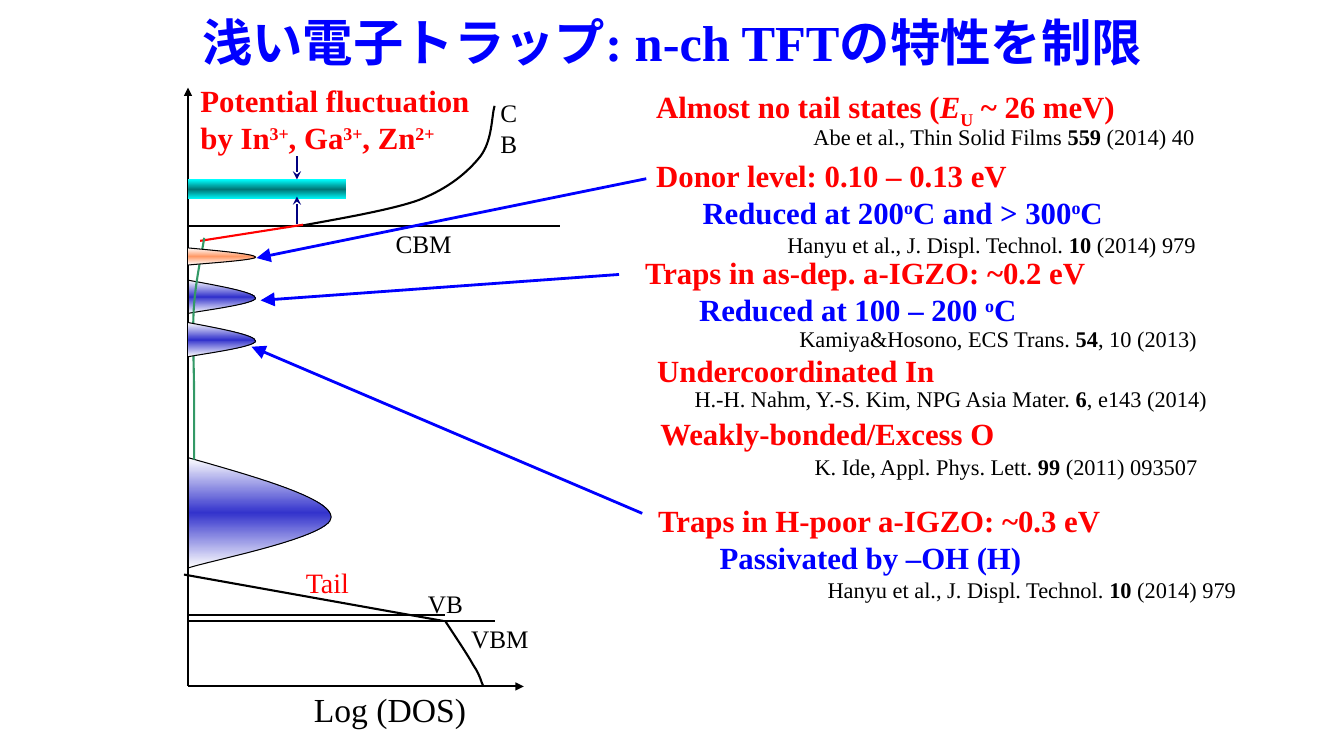
from collections import namedtuple
from copy import deepcopy

from lxml import etree
from pptx import Presentation
from pptx.dml.color import RGBColor
from pptx.enum.shapes import MSO_CONNECTOR, MSO_SHAPE
from pptx.enum.text import MSO_ANCHOR, MSO_AUTO_SIZE, PP_ALIGN
from pptx.oxml.ns import qn
from pptx.util import Inches, Pt

STRAIGHT = MSO_CONNECTOR.STRAIGHT
RECTANGLE = MSO_SHAPE.RECTANGLE
MIDDLE = MSO_ANCHOR.MIDDLE
CENTER = PP_ALIGN.CENTER
GROW = MSO_AUTO_SIZE.SHAPE_TO_FIT_TEXT

BLACK = RGBColor(0x00, 0x00, 0x00)
WHITE = RGBColor(0xFF, 0xFF, 0xFF)
RED = RGBColor(0xFF, 0x00, 0x00)
BLUE = RGBColor(0x00, 0x00, 0xFF)
NAVY = RGBColor(0x00, 0x00, 0x80)
GREEN = RGBColor(0x33, 0x99, 0x66)
INDIGO = RGBColor(0x33, 0x33, 0xCC)
ORANGE = RGBColor(0xFF, 0x99, 0x66)
CYAN = RGBColor(0x00, 0xFF, 0xFF)
TEAL = RGBColor(0x00, 0x76, 0x76)

FONT = "Times New Roman"
CELL = Inches(0.1)  # the slide is a grid of square cells
BASELINES = {"sup": "30000", "sub": "-25000"}

# Boxes and points are counted in grid cells.
Box = namedtuple("Box", "left top width height")
TITLE = Box(16.67, 0, 100, 8.3)
DIAGRAM = Box(18.65, 8.7, 33.3, 59.4)
NOTES = Box(63, 8.23, 61.2, 52.1)


def cells(n):
    return round(n * CELL)


def inside(box, x, y):
    """Slide position of a point given from the box's top left corner."""
    return box.left + x, box.top + y


def add_text(slide, box, lines, size, indent=0):
    """One paragraph; each line is (colour, runs), each run (text, styles)."""
    tf = slide.shapes.add_textbox(*map(cells, box)).text_frame
    tf.word_wrap = False
    tf.auto_size = GROW
    p = tf.paragraphs[0]
    if indent:
        pPr = p._p.get_or_add_pPr()
        pPr.set("marL", str(cells(indent)))
        pPr.set("indent", str(-cells(indent)))
    for i, (color, runs) in enumerate(lines):
        if i:
            p.add_line_break()
        for text, styles in runs:
            r = p.add_run()
            r.text = text
            r.font.name, r.font.size = FONT, Pt(size)
            r.font.color.rgb = color
            r.font.bold = "b" in styles
            r.font.italic = "i" in styles
            for style in BASELINES.keys() & set(styles):
                r._r.get_or_add_rPr().set("baseline", BASELINES[style])
    return tf


def bold(text, *styles):
    return text, ("b", *styles)


def add_line(slide, start, end, color=BLACK, width=1.5, **tips):
    """A straight line; tips name its headEnd or tailEnd as (type, size)."""
    line = slide.shapes.add_connector(STRAIGHT, *map(cells, (*start, *end)))
    line.line.color.rgb = color
    line.line.width = Pt(width)
    for side, (kind, size) in tips.items():
        etree.SubElement(line.line._get_or_add_ln(), qn("a:" + side),
                         type=kind, w=size, len=size)
    etree.SubElement(line._element.spPr, qn("a:effectLst"))


def add_curve(slide, points, color=BLACK, width=1.5):
    """An open outline of chained cubic curves; two points make a straight one."""
    start, *rest = [(cells(x), cells(y)) for x, y in points]
    fb = slide.shapes.build_freeform(*start)
    fb.add_line_segments(rest, close=False)
    sp = fb.convert_to_shape()
    segments = list(sp._element.iter(qn("a:lnTo")))
    for i in range(0, len(segments) - 2, 3):
        curve = etree.Element(qn("a:cubicBezTo"))
        segments[i].addprevious(curve)
        for segment in segments[i:i + 3]:
            curve.append(segment[0])
            segment.getparent().remove(segment)
    sp.shadow.inherit = False
    sp.fill.background()
    sp.line.color.rgb = color
    sp.line.width = Pt(width)
    return sp


def fill_gradient(sp, edge, core):
    """Vertical gradient: edge, core in the middle, edge."""
    sp.fill.gradient()
    sp.fill.gradient_angle = 270
    first = sp.fill.gradient_stops[0]._gs
    first.addnext(deepcopy(first))
    for stop, position, color in zip(sp.fill.gradient_stops, (0, 0.5, 1), (edge, core, edge)):
        stop.position = position
        stop.color.rgb = color


def add_peak(slide, box, color):
    """A trap level bulging from the energy axis."""
    shares = [(0, 0), (0.49, 0.18), (1, 0.37), (1, 0.54),
              (1, 0.72), (0.16, 0.93), (0, 1)]
    points = [inside(box, x * box.width, y * box.height) for x, y in shares]
    fill_gradient(add_curve(slide, points, width=0.75), WHITE, color)


def draw_title(slide, box):
    title = [(BLUE, [bold("浅い電子トラップ: n-ch TFTの特性を制限")])]
    tf = add_text(slide, box, title, 36)
    tf.auto_size = MSO_AUTO_SIZE.NONE
    tf.word_wrap = True
    tf.vertical_anchor = MIDDLE
    tf.paragraphs[0].alignment = CENTER


def draw_diagram(slide, box):
    def at(x, y):
        return inside(box, x, y)

    def peak(y, width, height, color=INDIGO):
        add_peak(slide, Box(*at(0, y), width, height), color)

    peak(36.7, 14.2, 10.95)
    peak(19.1, 6.7, 3.3)

    origin = at(0, box.height)
    arrow, barb = ("triangle", "med"), ("stealth", "med")
    add_line(slide, at(0, 13.7), at(36.9, 13.7))
    add_line(slide, origin, at(box.width, box.height), tailEnd=arrow)
    add_line(slide, at(0, 52.9), at(30.4, 52.9))
    add_line(slide, at(-0.4, 48.3), at(25.3, 52.9))

    conduction_band = [(11.2, 13.7), (13.2, 13.3), (20.1, 12.2), (23, 11.1),
                       (26, 9.9), (27.8, 8.3), (29, 6.8),
                       (30.2, 5.2), (30.1, 2.8), (30.4, 1.8)]
    valence_band = [(25.5, 52.9), (26.6, 54.6), (27.7, 56.2), (28.3, 57.3),
                    (29, 58.3), (29.1, 59.1), (29.3, 59.4)]
    fluctuation_tail = [(1.2, 15.2), (11.4, 13.6)]
    gap_states = [(0.6, 36.9), (0.6, 35.8), (0.6, 33), (0.6, 30.4),
                  (0.6, 27.8), (0.4, 24), (0.6, 21.5),
                  (0.8, 18.9), (1.4, 16.3), (1.6, 14.9)]
    for points, color in ((conduction_band, BLACK), (valence_band, BLACK),
                          (fluctuation_tail, RED), (gap_states, GREEN)):
        add_curve(slide, [at(*point) for point in points], color)

    add_line(slide, at(0, 0), origin, headEnd=arrow)
    peak(15.9, 6.7, 1.7, ORANGE)
    peak(23.3, 6.7, 3.4)

    band = slide.shapes.add_shape(RECTANGLE, *map(cells, (*at(0, 9.1), 15.7, 2)))
    band.shadow.inherit = False
    band.line.fill.background()
    fill_gradient(band, CYAN, TEAL)
    add_line(slide, at(10.8, 10.8), at(10.8, 13.5), NAVY, headEnd=barb)
    add_line(slide, at(10.8, 6.8), at(10.8, 9.1), NAVY, tailEnd=barb)
    add_line(slide, at(0, 52.3), at(25.5, 52.3))

    for x, y, width, text, size, color in ((11.5, 59.2, 17.1, "Log (DOS)", 24, BLACK),
                                           (30, 0.5, 5.3, "CB", 18, BLACK),
                                           (22.8, 49.2, 5.5, "VB", 18, BLACK),
                                           (19.6, 13.5, 7.6, "CBM", 18, BLACK),
                                           (27.1, 52.6, 7.7, "VBM", 18, BLACK),
                                           (10.7, 46.9, 6.3, "Tail", 20, RED)):
        add_text(slide, Box(*at(x, y), width, 1 + size / 6), [(color, [(text, ())])], size)

    ions = [bold("by In"), bold("3+", "sup"), bold(", Ga"), bold("3+", "sup"),
            bold(", Zn"), bold("2+", "sup")]
    fluctuation = [(RED, [bold("Potential fluctuation")]), (RED, ions)]
    add_text(slide, Box(*at(0.25, -1.1), 29.6, 8.4), fluctuation, 22)


def draw_notes(slide, box):
    """Findings, each with its remedy if any, and their references."""
    degree = bold("o", "sup")
    findings = [
        (1.1, 0, 48.2, [bold("Almost no tail states ("), bold("E", "i"),
                        bold("U", "sub"), bold(" ~ 26 meV)")], 0, []),
        (1.1, 6.8, 47.1, [bold("Donor level: 0.10 – 0.13 eV")], 4.6,
         [bold("Reduced at 200"), degree, bold("C and > 300"), degree, bold("C")]),
        (0, 16.5, 46.2, [bold("Traps in as-dep. a-IGZO: ~0.2 eV")], 5.35,
         [bold("Reduced at 100 – 200 "), degree, bold("C")]),
        (1.2, 26.2, 29.8, [bold("Undercoordinated In")], 0, []),
        (1.5, 32.4, 35.5, [bold("Weakly-bonded/Excess O")], 0, []),
        (1.3, 41.1, 46.4, [bold("Traps in H-poor a-IGZO: ~0.3 eV")], 6.1,
         [bold("Passivated by –OH (H)")]),
    ]
    for x, y, width, finding, indent, remedy in findings:
        lines = [(RED, finding)] + ([(BLUE, remedy)] if remedy else [])
        add_text(slide, Box(*inside(box, x, y), width, 1 + 3.7 * len(lines)),
                 lines, 22, indent)

    hanyu = ("Hanyu et al., J. Displ. Technol. ", "10", " (2014) 979")
    references = [
        (16.7, 3.5, 40.3, ("Abe et al., Thin Solid Films ", "559", " (2014) 40")),
        (14.1, 14.2, 43.1, hanyu),
        (15.3, 23.5, 41.8, ("Kamiya&Hosono, ECS Trans. ", "54", ", 10 (2013)")),
        (4.9, 29.5, 53.5, ("H.-H. Nahm, Y.-S. Kim, NPG Asia Mater. ", "6", ", e143 (2014)")),
        (16.8, 36.2, 40.5, ("K. Ide, Appl. Phys. Lett. ", "99", " (2011) 093507")),
        (18.1, 48.4, 43.1, hanyu),
    ]
    for x, y, width, (source, volume, issue) in references:
        runs = [(source, ()), bold(volume), (issue, ())]
        add_text(slide, Box(*inside(box, x, y), width, 3.7), [(BLACK, runs)], 16)


def link_notes_to_peaks(slide, notes, diagram):
    for start, end in (((1.1, 9.5), (6.8, 16.9)), ((-1.6, 19), (7.2, 21.1)),
                       ((0.7, 42.7), (6.3, 25.7))):
        add_line(slide, inside(notes, *start), inside(diagram, *end), BLUE, 2,
                 tailEnd=("triangle", "lg"))


def main():
    prs = Presentation()
    prs.slide_width, prs.slide_height = Inches(13.33), Inches(7.5)
    slide = prs.slides.add_slide(prs.slide_layouts[6])
    draw_title(slide, TITLE)
    draw_diagram(slide, DIAGRAM)
    link_notes_to_peaks(slide, NOTES, DIAGRAM)
    draw_notes(slide, NOTES)
    prs.save("out.pptx")


if __name__ == "__main__":
    main()
